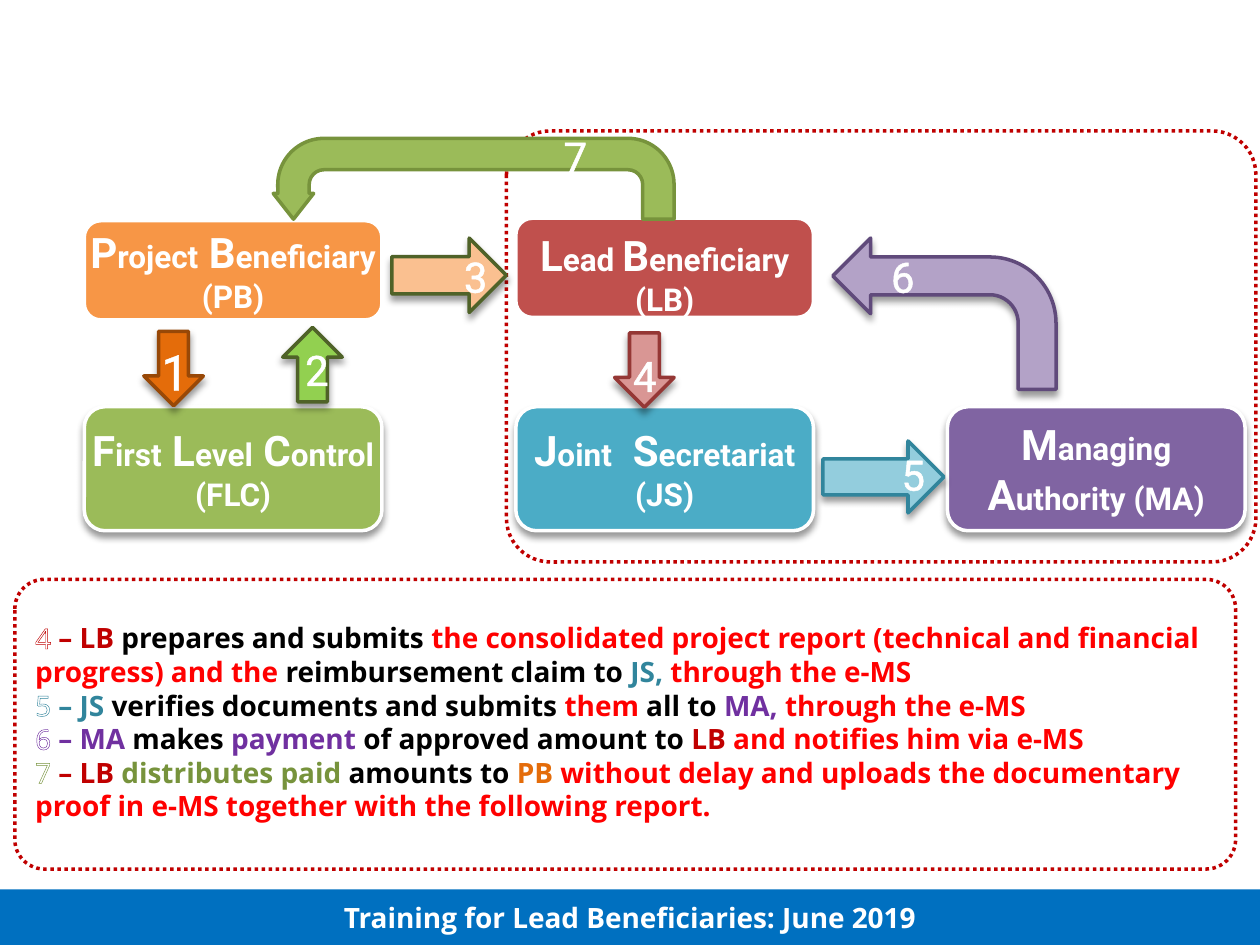
import lxml.etree
import pptx
import pptx.dml.color
import pptx.enum.dml
import pptx.enum.shapes
import pptx.enum.text
import pptx.oxml.ns
import pptx.util

Cm, Pt = pptx.util.Cm, pptx.util.Pt
RGB = pptx.dml.color.RGBColor
SHAPE = pptx.enum.shapes.MSO_SHAPE
ANCHOR = pptx.enum.text.MSO_ANCHOR
CENTER = pptx.enum.text.PP_ALIGN.CENTER
qn = pptx.oxml.ns.qn

WHITE, BLACK = RGB(0xFF, 0xFF, 0xFF), RGB(0, 0, 0)
FOOTER_BLUE = RGB(0x00, 0x70, 0xC0)
DARK_RED, RED = RGB(0xC0, 0x00, 0x00), RGB(0xFF, 0x00, 0x00)
TEAL, VIOLET = RGB(0x31, 0x85, 0x9C), RGB(0x70, 0x30, 0xA0)
OLIVE, ORANGE = RGB(0x77, 0x93, 0x3C), RGB(0xE4, 0x6C, 0x0A)
BOX_GREEN, BOX_ORANGE = RGB(0x9B, 0xBB, 0x59), RGB(0xF7, 0x96, 0x46)
BOX_AQUA, BOX_PURPLE = RGB(0x4B, 0xAC, 0xC6), RGB(0x80, 0x64, 0xA2)
BOX_RED = RGB(0xC0, 0x50, 0x4D)
BROWN, LIME, MOSS = RGB(0x98, 0x48, 0x07), RGB(0x92, 0xD0, 0x50), RGB(0x4F, 0x62, 0x28)
PEACH, ROSE, WINE = RGB(0xFA, 0xC0, 0x90), RGB(0xD9, 0x96, 0x94), RGB(0x95, 0x37, 0x35)
SKY, LILAC, PLUM = RGB(0x93, 0xCD, 0xDD), RGB(0xB3, 0xA2, 0xC7), RGB(0x60, 0x4A, 0x7B)

# Wording of the process steps: number, its outline colour, coloured spans
STEPS = [
    ("4", DARK_RED, [
        (" – LB ", DARK_RED), ("prepares and submits ", BLACK),
        ("the consolidated project report (technical and financial progress) and the ", RED),
        ("reimbursement claim to ", BLACK), ("JS, ", TEAL), ("through the e-MS", RED)]),
    ("5", TEAL, [
        (" – JS ", TEAL), ("verifies documents and submits ", BLACK), ("them ", RED),
        ("all to ", BLACK), ("MA, ", VIOLET), ("through the e-MS", RED)]),
    ("6", VIOLET, [
        (" – MA ", VIOLET), ("makes ", BLACK), ("payment ", VIOLET),
        ("of approved amount to ", BLACK), ("LB ", DARK_RED),
        ("and notifies him via e-MS", RED)]),
    ("7", OLIVE, [
        (" – LB ", DARK_RED), ("distributes paid ", OLIVE), ("amounts to ", BLACK),
        ("PB ", ORANGE),
        ("without delay and uploads the documentary proof in e-MS together with "
         "the following report.", RED)]),
]


def cm_box(*lengths):
    return [Cm(length) for length in lengths]


def set_all(target, **values):
    for name, value in values.items():
        setattr(target, name, value)


def add_span(para, text, color, outline=None, **font):
    span = para.add_run()
    span.text = text
    set_all(span.font, **font)
    span.font.color.rgb = color
    if outline is not None:
        line = lxml.etree.Element(qn("a:ln"), w=str(Pt(1.45)))
        fill = lxml.etree.SubElement(line, qn("a:solidFill"))
        lxml.etree.SubElement(fill, qn("a:srgbClr"), val=str(outline))
        span.font._element.insert(0, line)


def add_shape(page, kind, box, fill=None, line=None, shadow=False, adjustments=()):
    shape = page.shapes.add_shape(kind, *cm_box(*box))
    shape.shadow.inherit = False
    for index, value in enumerate(adjustments):
        shape.adjustments[index] = value
    if fill is None:
        shape.fill.background()
    else:
        shape.fill.solid()
        shape.fill.fore_color.rgb = fill
    if line is None:
        shape.line.fill.background()
    else:
        shape.line.color.rgb = line
        shape.line.width = Pt(2)
    if shadow:
        effects = shape._element.spPr.find(qn("a:effectLst"))
        outer = lxml.etree.SubElement(
            effects, qn("a:outerShdw"), blurRad=str(Pt(4)), dist=str(Pt(3)),
            dir="5400000", rotWithShape="0")
        color = lxml.etree.SubElement(outer, qn("a:srgbClr"), val=str(BLACK))
        lxml.etree.SubElement(color, qn("a:alpha"), val="40000")
    return shape


def add_dotted_frame(page, box):
    frame = add_shape(page, SHAPE.ROUNDED_RECTANGLE, box, line=DARK_RED, adjustments=[0.102])
    frame.line.dash_style = pptx.enum.dml.MSO_LINE.ROUND_DOT


def add_text_box(page, box):
    frame = page.shapes.add_textbox(*cm_box(*box)).text_frame
    set_all(frame, word_wrap=True, auto_size=pptx.enum.text.MSO_AUTO_SIZE.SHAPE_TO_FIT_TEXT)
    return frame


def clear_margins(frame):
    set_all(frame, margin_left=0, margin_top=0, margin_right=0, margin_bottom=0)


def add_footer(page, left, top, width, height):
    bar = add_shape(page, SHAPE.RECTANGLE, (left, top, width, height), FOOTER_BLUE)
    para = bar.text_frame.paragraphs[0]
    para.alignment = CENTER
    add_span(para, "Training for Lead Beneficiaries: June 2019", WHITE,
             name="Open Sans", size=Pt(16), bold=True)


def add_steps(page, left, top, width, height):
    frame = add_text_box(page, (left + 0.41, top + 0.84, width - 1.01, height - 1.73))
    clear_margins(frame)
    font = {"name": "Open Sans", "size": Pt(16)}
    for index, (number, outline, spans) in enumerate(STEPS):
        para = frame.add_paragraph() if index else frame.paragraphs[0]
        set_all(para._p.get_or_add_pPr(), marL=Cm(1.24), indent=-Cm(1.24))
        add_span(para, number, WHITE, outline, bold=False, **font)
        for text, color in spans:
            add_span(para, text, color, bold=True, **font)
    add_dotted_frame(page, (left, top, width, height))


def add_diagram(page, left, top):
    def place(x, y, width, height):
        return left + x, top + y, width, height

    add_dotted_frame(page, place(8.51, 0.14, 15.11, 8.69))

    # Bodies: column, top, height, fill, shadow, name as large and small parts in turn
    bodies = [
        (0, 5.7, 2.5, BOX_GREEN, True, ["F", "irst", " L", "evel", " C", "ontrol (FLC)"]),
        (0, 1.95, 2, BOX_ORANGE, False, ["P", "roject", " B", "eneficiary (PB)"]),
        (1, 5.7, 2.5, BOX_AQUA, True, ["J", "oint", "  S", "ecretariat (JS)"]),
        (2, 5.7, 2.5, BOX_PURPLE, True, ["M", "anaging ", "A", "uthority (MA)"]),
        (1, 1.9, 2, BOX_RED, False, ["L", "ead ", "B", "eneficiary (LB)"]),
    ]
    for column, y, height, fill, shadow, parts in bodies:
        body = add_shape(page, SHAPE.ROUNDED_RECTANGLE, place(column * 8.7, y, 6, height),
                         fill, WHITE, shadow)
        frame = body.text_frame
        if fill == BOX_RED:
            frame.vertical_anchor = ANCHOR.TOP
        else:
            frame.vertical_anchor = ANCHOR.MIDDLE
            clear_margins(frame)
        para = frame.paragraphs[0]
        para.alignment = CENTER
        for index, part in enumerate(parts):
            add_span(para, part, WHITE, name="Roboto", bold=True,
                     size=Pt(18 if index % 2 else 24))

    # Straight arrows: kind, box, fill, line, rotation
    arrows = [
        (SHAPE.DOWN_ARROW, (1.2, 4.18, 1.2, 1.5), ORANGE, BROWN, 0),
        (SHAPE.UP_ARROW, (4, 4.1, 1.2, 1.5), LIME, MOSS, 0),
        (SHAPE.RIGHT_ARROW, (6.2, 2.3, 2.31, 1.5), PEACH, MOSS, 0),
        (SHAPE.RIGHT_ARROW, (10.54, 4.36, 1.5, 1.2), ROSE, WINE, 90),
        (SHAPE.RIGHT_ARROW, (14.89, 6.39, 2.44, 1.45), SKY, TEAL, 0),
    ]
    for kind, box, fill, line, rotation in arrows:
        add_shape(page, kind, place(*box), fill, line, True).rotation = rotation

    # Curved arrows, mirrored so that they lead back to the left
    u_turn = add_shape(page, SHAPE.U_TURN_ARROW, place(3.81, 0.29, 8.08, 1.63), BOX_GREEN,
                       OLIVE, adjustments=[0.388, 0.25, 0.319, 0.571, 1])
    bent = add_shape(page, SHAPE.BENT_ARROW, place(15.09, 2.3, 4.5, 3.05), LILAC, PLUM, True)
    for arrow in (u_turn, bent):
        arrow._element.spPr.find(qn("a:xfrm")).set("flipH", "1")

    # Step numbers on the arrows
    numbers = [("1", 1.3, 4.26), ("2", 4.19, 4.31), ("3", 7.39, 2.43), ("4", 10.8, 4.43),
               ("5", 16.21, 6.42), ("6", 16, 2.43), ("7", 9.4, 0.01)]
    for number, x, y in numbers:
        size, height = (28, 1.45) if number == "1" else (24, 1.27)
        para = add_text_box(page, place(x, y, 1, height)).paragraphs[0]
        para.alignment = CENTER
        add_span(para, number, WHITE, WHITE, name="Roboto", size=Pt(size))


def main():
    deck = pptx.Presentation()
    set_all(deck, slide_width=Cm(25.4), slide_height=Cm(19.05))
    page = deck.slides.add_slide(deck.slide_layouts[6])
    add_footer(page, 0, 17.93, 25.4, 1.12)
    add_diagram(page, 1.7, 2.5)
    add_steps(page, 0.3, 11.68, 24.61, 5.84)
    deck.save("out.pptx")


if __name__ == "__main__":
    main()
